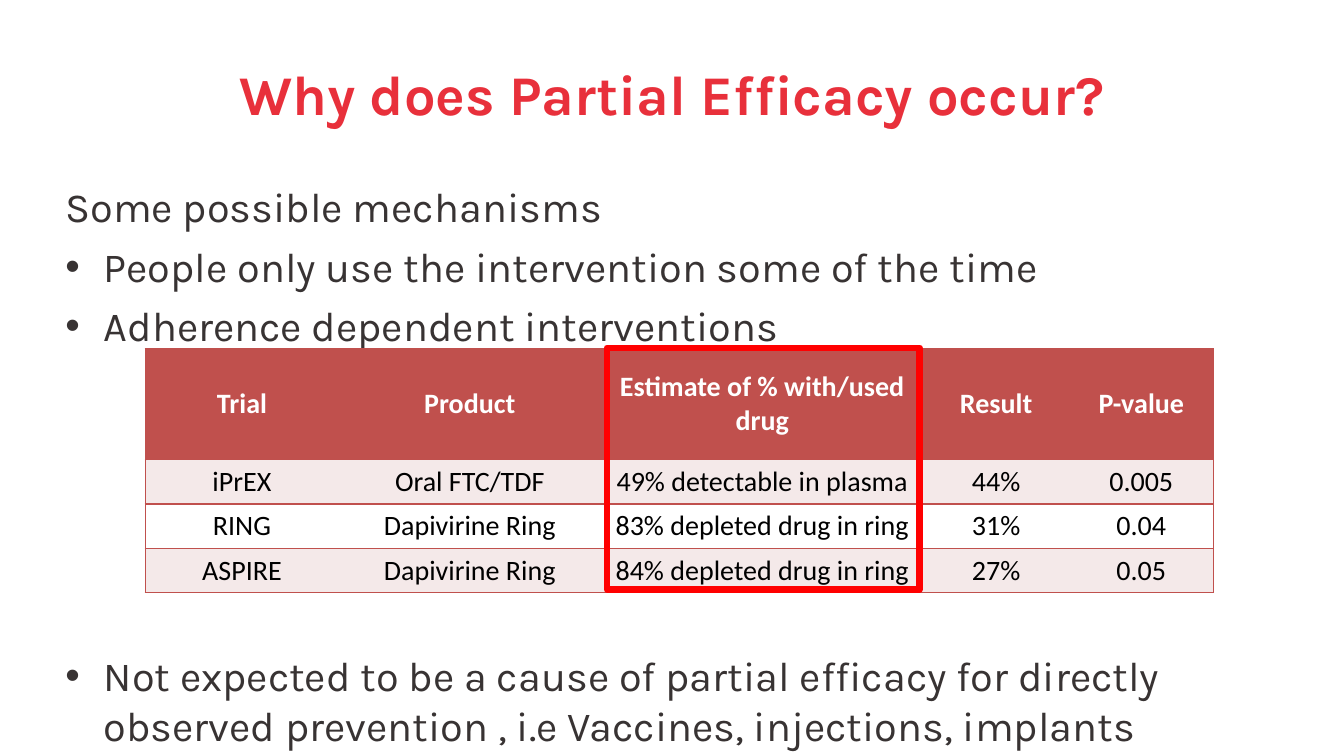
from dataclasses import astuple, dataclass

from lxml import etree
from pptx import Presentation
from pptx import util as u
from pptx.dml.color import RGBColor
from pptx.enum import shapes, text
from pptx.oxml.ns import qn

TITLE_RED = "E8303B"
BODY_GREY = "383333"
TABLE_RED = "C0504D"
BAND_PINK = "F4E9E9"
BODY_SIZE = 29.6
LINE_GAP = 7
TABLE_GAP = 214.5  # leaves room for the table between two bullets


@dataclass
class Point:
    wording: str
    bulleted: bool = True
    space_before: float = LINE_GAP


@dataclass
class Trial:
    name: str
    product: str
    drug_use: str
    result: str
    p_value: str


POINTS = [
    Point("Some possible mechanisms", bulleted=False, space_before=0),
    Point("People only use the intervention some of the time"),
    Point("Adherence dependent interventions"),
    Point("Not expected to be a cause of partial efficacy for directly observed "
          "prevention , i.e Vaccines, injections, implants", space_before=TABLE_GAP),
]
HEADINGS = Trial("Trial", "Product", "Estimate of % with/used drug", "Result", "P-value")
TRIALS = [
    Trial("iPrEX", "Oral FTC/TDF", "49% detectable in plasma", "44%", "0.005"),
    Trial("RING", "Dapivirine Ring", "83% depleted drug in ring", "31%", "0.04"),
    Trial("ASPIRE", "Dapivirine Ring", "84% depleted drug in ring", "27%", "0.05"),
]
COLUMN_WIDTHS = [1.92, 2.6, 3.2, 1.44, 1.44]
HEADING_HEIGHT, TRIAL_HEIGHT = 1.1, 0.44


def colour(code: str) -> RGBColor:
    return RGBColor.from_string(code)


def write(para, wording: str, *, size: float, face: str, ink: str,
          bold: bool = False, align=text.PP_ALIGN.LEFT, space_before: float = 0) -> None:
    para.alignment = align
    para.space_before = u.Pt(space_before)
    span = para.add_run()
    span.text = wording
    span.font.size = u.Pt(size)
    span.font.name = face
    span.font.bold = bold
    span.font.color.rgb = colour(ink)


def add_bullet(para) -> None:
    props = para._p.get_or_add_pPr()
    props.set("marL", str(u.Inches(0.38)))
    props.set("indent", str(-u.Inches(0.38)))
    etree.SubElement(props, qn("a:buFont")).set("typeface", "Arial")
    etree.SubElement(props, qn("a:buChar")).set("char", "•")


def add_box(page, left: float, top: float, width: float, height: float):
    box = page.shapes.add_textbox(*map(u.Inches, (left, top, width, height)))
    box.text_frame.word_wrap = True
    return box.text_frame


def add_borders(cell, sides: str) -> None:
    props = cell._tc.get_or_add_tcPr()
    for side in "LRTB":
        border = etree.SubElement(props, qn(f"a:ln{side}"))
        if side in sides:
            border.set("w", str(u.Pt(1)))
            fill = etree.SubElement(border, qn("a:solidFill"))
            etree.SubElement(fill, qn("a:srgbClr")).set("val", TABLE_RED)
        else:
            border.set("w", "0")
            etree.SubElement(border, qn("a:noFill"))


def add_title(page) -> None:
    frame = add_box(page, 0.82, 0.3, 11.69, 1.25)
    frame.vertical_anchor = text.MSO_ANCHOR.MIDDLE
    write(frame.paragraphs[0], "Why does Partial Efficacy occur?", size=40,
          face="Karla", ink=TITLE_RED, bold=True, align=text.PP_ALIGN.CENTER)


def add_points(page) -> None:
    frame = add_box(page, 0.55, 1.75, 11.91, 5.45)
    for number, point in enumerate(POINTS):
        para = frame.add_paragraph() if number else frame.paragraphs[0]
        if point.bulleted:
            add_bullet(para)
        write(para, point.wording, size=BODY_SIZE, face="Karla", ink=BODY_GREY,
              space_before=point.space_before)


def add_trial_table(page) -> None:
    rows = [HEADINGS, *TRIALS]
    height = HEADING_HEIGHT + TRIAL_HEIGHT * len(TRIALS)
    table = page.shapes.add_table(
        len(rows), len(COLUMN_WIDTHS), u.Inches(1.44), u.Inches(3.46),
        u.Inches(sum(COLUMN_WIDTHS)), u.Inches(height)).table
    for column, width in zip(table.columns, COLUMN_WIDTHS):
        column.width = u.Inches(width)
    last = len(COLUMN_WIDTHS) - 1
    for r, trial in enumerate(rows):
        heading = r == 0
        table.rows[r].height = u.Inches(HEADING_HEIGHT if heading else TRIAL_HEIGHT)
        backdrop = TABLE_RED if heading else BAND_PINK if r % 2 else "FFFFFF"
        for c, wording in enumerate(astuple(trial)):
            cell = table.cell(r, c)
            add_borders(cell, "TB" + ("L" if c == 0 else "R" if c == last else ""))
            cell.fill.solid()
            cell.fill.fore_color.rgb = colour(backdrop)
            cell.vertical_anchor = text.MSO_ANCHOR.MIDDLE
            write(cell.text_frame.paragraphs[0], wording, size=20, face="Calibri",
                  ink="FFFFFF" if heading else "000000", bold=heading,
                  align=text.PP_ALIGN.CENTER)


def add_highlight(page) -> None:
    frame = page.shapes.add_shape(shapes.MSO_SHAPE.RECTANGLE,
                                  *map(u.Inches, (6.02, 3.45, 3.1, 2.4)))
    frame.shadow.inherit = False
    frame.fill.background()
    frame.line.color.rgb = colour("FF0000")
    frame.line.width = u.Pt(4.5)
    etree.SubElement(frame.line._get_or_add_ln(), qn("a:round"))


def main() -> None:
    deck = Presentation()
    deck.slide_width, deck.slide_height = u.Inches(13.33), u.Inches(7.5)
    page = deck.slides.add_slide(deck.slide_layouts[6])
    # Heading and bullets
    add_title(page)
    add_points(page)
    # Trial results with the drug use column outlined
    add_trial_table(page)
    add_highlight(page)
    deck.save("out.pptx")


if __name__ == "__main__":
    main()
